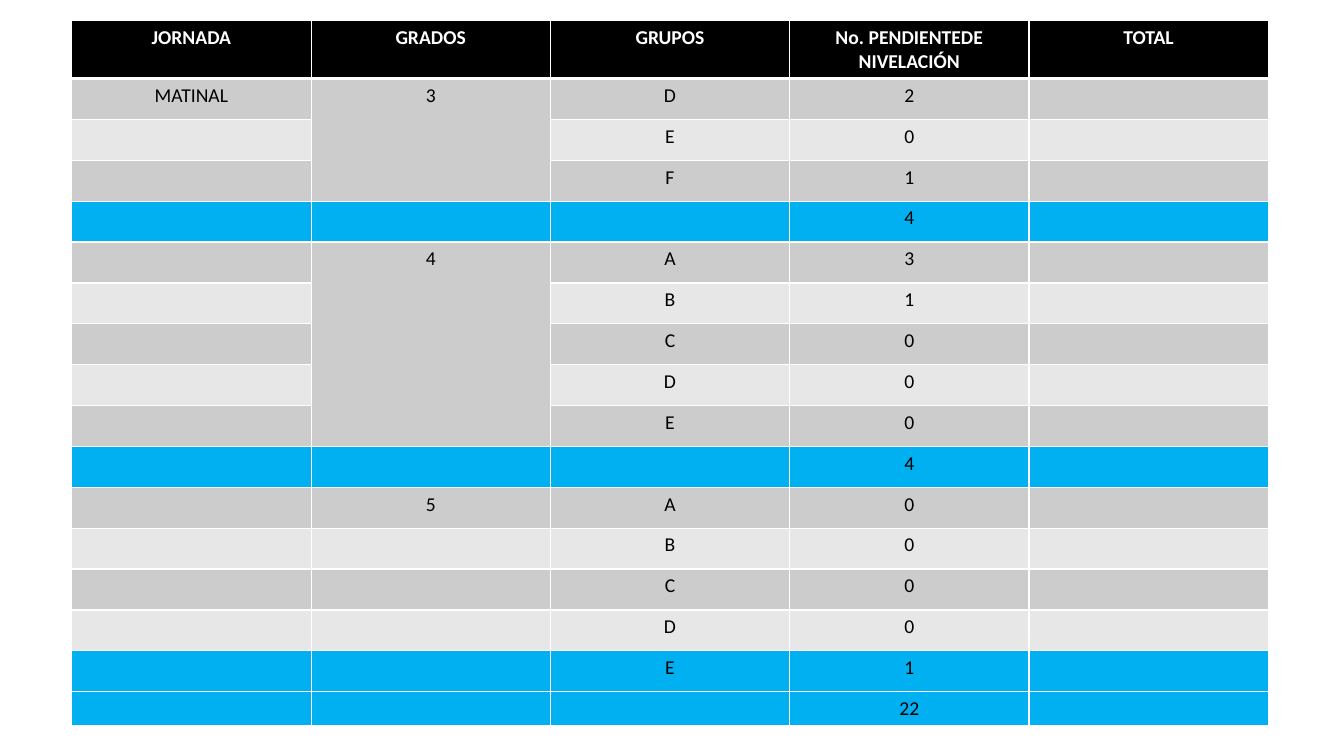
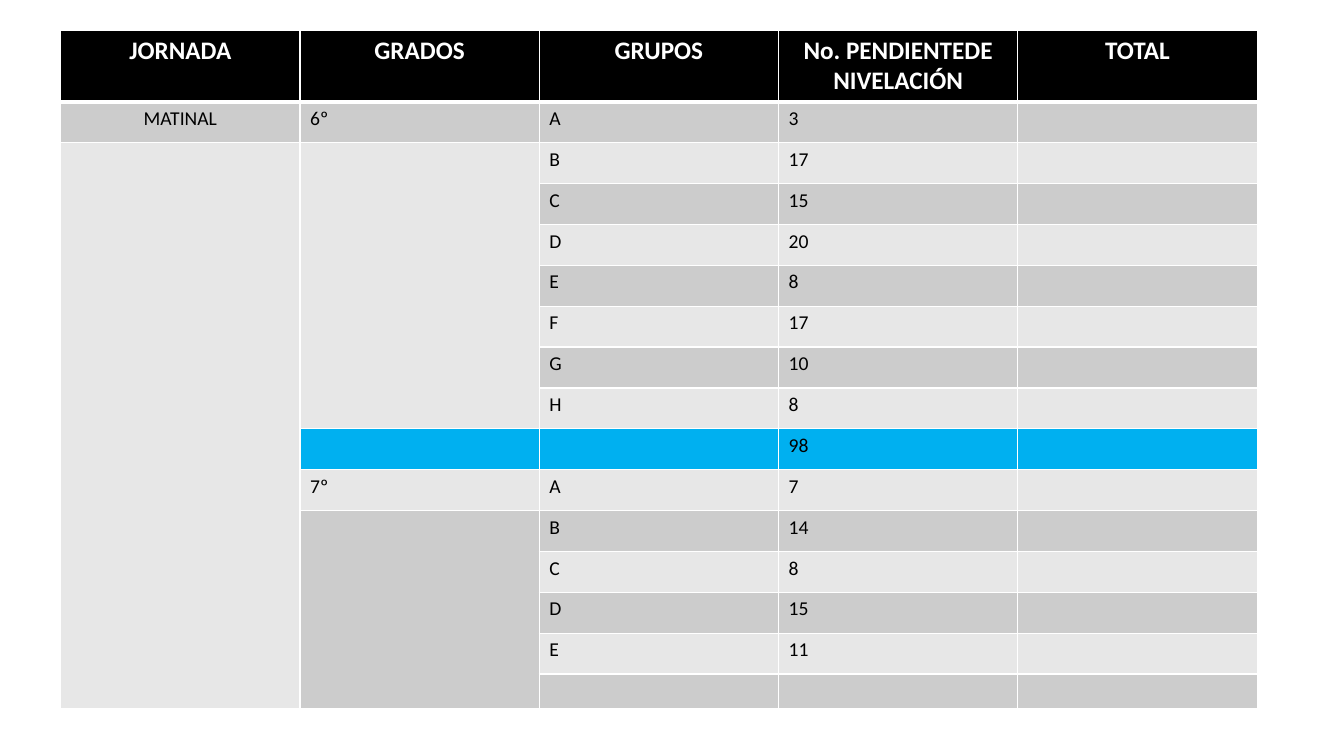
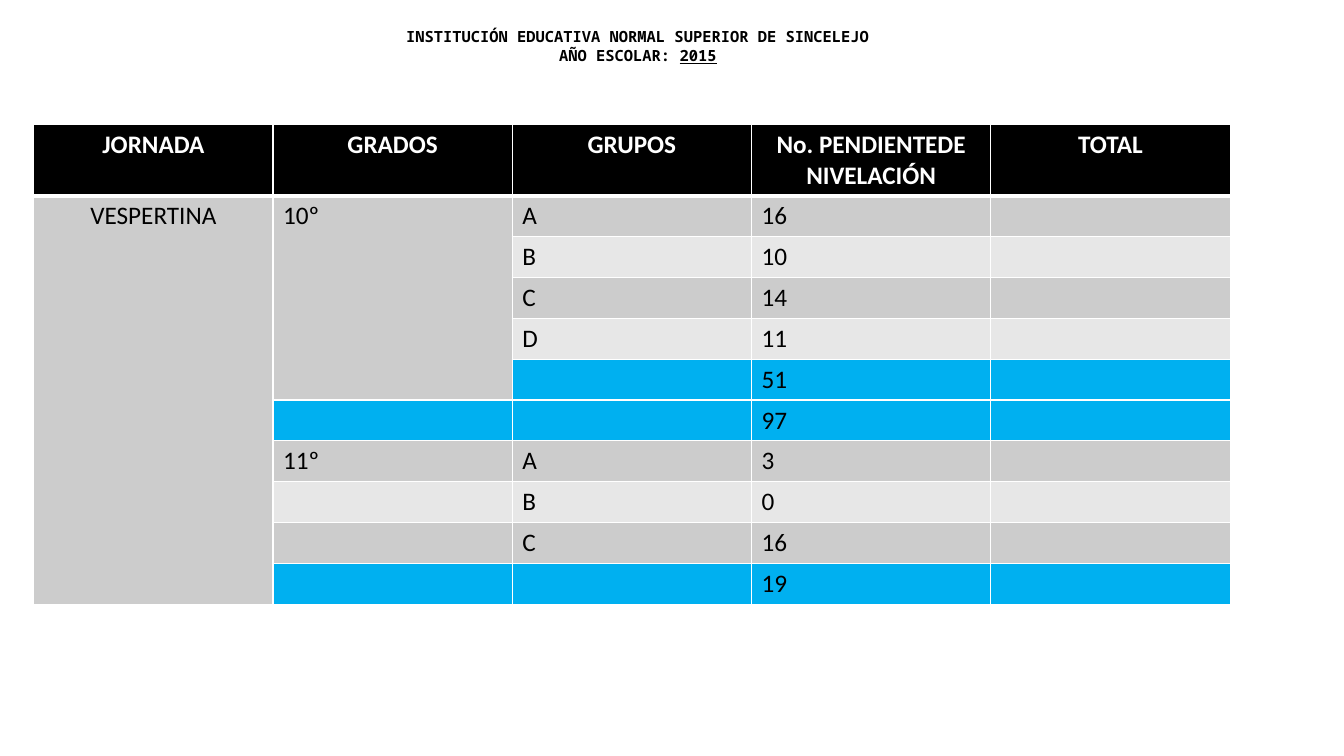
"""Builds three slides with tables of pupils pending levelling, by grade and group."""
from dataclasses import dataclass

from lxml import etree
from pptx import Presentation
from pptx.dml.color import RGBColor
from pptx.enum.text import MSO_ANCHOR, PP_ALIGN
from pptx.oxml.ns import qn
from pptx.util import Cm, Pt

CENTER = PP_ALIGN.CENTER
LEFT = PP_ALIGN.LEFT
MIDDLE = MSO_ANCHOR.MIDDLE
BLANK_LAYOUT = 6


@dataclass(frozen=True)
class Theme:
    """Colours, fonts, type sizes and table measures."""
    white: str = "FFFFFF"
    black: str = "000000"
    band_dark: str = "CCCCCC"
    band_light: str = "E7E7E7"
    total: str = "00B0F0"
    table_font: str = "Calibri"
    heading_font: str = "Noto Sans Mono"
    small: int = 14
    large: int = 18
    heading: int = 11
    thin_line: int = 1
    thick_line: int = 3
    column_width: float = 6.03
    row_height: float = 1.03


HEADERS = ("JORNADA", "GRADOS", "GRUPOS", "No. PENDIENTEDE NIVELACIÓN", "TOTAL")

PRIMARY_ROWS = [
    ("MATINAL", "3", "D", "2"),
    ("", "", "E", "0"),
    ("", "", "F", "1"),
    ("", "", "", "4"),
    ("", "4", "A", "3"),
    ("", "", "B", "1"),
    ("", "", "C", "0"),
    ("", "", "D", "0"),
    ("", "", "E", "0"),
    ("", "", "", "4"),
    ("", "5", "A", "0"),
    ("", "", "B", "0"),
    ("", "", "C", "0"),
    ("", "", "D", "0"),
    ("", "", "E", "1"),
    ("", "", "", "22"),
]

SECONDARY_ROWS = [
    ("MATINAL", "6º", "A", "3"),
    ("", "", "B", "17"),
    ("", "", "C", "15"),
    ("", "", "D", "20"),
    ("", "", "E", "8"),
    ("", "", "F", "17"),
    ("", "", "G", "10"),
    ("", "", "H", "8"),
    ("", "", "", "98"),
    ("", "7º", "A", "7"),
    ("", "", "B", "14"),
    ("", "", "C", "8"),
    ("", "", "D", "15"),
    ("", "", "E", "11"),
    ("", "", "", ""),
]

AFTERNOON_ROWS = [
    ("VESPERTINA", "10º", "A", "16"),
    ("", "", "B", "10"),
    ("", "", "C", "14"),
    ("", "", "D", "11"),
    ("", "", "", "51"),
    ("", "", "", "97"),
    ("", "11º", "A", "3"),
    ("", "", "B", "0"),
    ("", "", "C", "16"),
    ("", "", "", "19"),
]


class Deck:
    """Holds the theme, the presentation and the current slide."""

    def __init__(self, theme):
        """Start an empty widescreen presentation."""
        self.theme = theme
        self.presentation = Presentation()
        self.presentation.slide_width = Cm(33.87)
        self.presentation.slide_height = Cm(19.05)
        self.slide = None

    def add_slide(self):
        """Add a blank slide and make it current."""
        layout = self.presentation.slide_layouts[BLANK_LAYOUT]
        self.slide = self.presentation.slides.add_slide(layout)

    def style(self, paragraph, font_name, size, color, bold, alignment):
        """Set the font and alignment of a paragraph."""
        paragraph.alignment = alignment
        font = paragraph.font
        font.name = font_name
        font.size = Pt(size)
        font.bold = bold
        font.color.rgb = RGBColor.from_string(color)

    def heading(self, left, top, width, height, lines):
        """Add centred heading lines, each a list of (text, underlined) runs."""
        box = self.slide.shapes.add_textbox(Cm(left), Cm(top), Cm(width), Cm(height))
        frame = box.text_frame
        frame.word_wrap = True
        frame.vertical_anchor = MIDDLE
        for index, runs in enumerate(lines):
            paragraph = frame.add_paragraph() if index else frame.paragraphs[0]
            self.style(paragraph, self.theme.heading_font, self.theme.heading,
                       self.theme.black, True, CENTER)
            for text, underlined in runs:
                run = paragraph.add_run()
                run.text = text
                if underlined:
                    run.font.underline = True

    def borders(self, cell, top, bottom):
        """Draw white borders around a cell."""
        properties = cell._tc.get_or_add_tcPr()
        thin = self.theme.thin_line
        for side, width in (("L", thin), ("R", thin), ("T", top), ("B", bottom)):
            line = etree.SubElement(properties, qn(f"a:ln{side}"), w=str(Pt(width)))
            fill = etree.SubElement(line, qn("a:solidFill"))
            etree.SubElement(fill, qn("a:srgbClr"), val=self.theme.white)

    def row_fill(self, row, totals):
        """Return the fill colour of a table row."""
        if row == 0:
            return self.theme.black
        if row in totals:
            return self.theme.total
        return self.theme.band_dark if row % 2 else self.theme.band_light

    def table(self, left, top, rows, totals, merges, header_size, body_size,
              centered_columns, header_height, last_height):
        """Add a banded table; merges are (column, first row, last row)."""
        theme = self.theme
        heights = [header_height] + [theme.row_height] * (len(rows) - 1) + [last_height]
        frame = self.slide.shapes.add_table(
            len(heights), len(HEADERS), Cm(left), Cm(top),
            Cm(theme.column_width * len(HEADERS)), Cm(sum(heights)))
        table = frame.table
        for column in table.columns:
            column.width = Cm(theme.column_width)
        contents = [HEADERS] + [(*row, "") for row in rows]
        for row, (texts, height) in enumerate(zip(contents, heights)):
            table.rows[row].height = Cm(height)
            header = row == 0
            for column, text in enumerate(texts):
                cell = table.cell(row, column)
                self.borders(cell,
                             theme.thick_line if row == 1 else theme.thin_line,
                             theme.thick_line if header else theme.thin_line)
                cell.fill.solid()
                cell.fill.fore_color.rgb = RGBColor.from_string(self.row_fill(row, totals))
                cell.text = text
                self.style(cell.text_frame.paragraphs[0], theme.table_font,
                           header_size if header else body_size,
                           theme.white if header else theme.black, header,
                           CENTER if header or column < centered_columns else LEFT)
        for column, first, last in merges:
            table.cell(first, column).merge(table.cell(last, column))


def main():
    """Build and save the presentation."""
    theme = Theme()
    deck = Deck(theme)

    deck.add_slide()
    deck.table(1.81, 0.52, PRIMARY_ROWS, totals={4, 10, 15, 16},
               merges=[(1, 1, 3), (1, 5, 9)],
               header_size=theme.small, body_size=theme.small,
               centered_columns=5, header_height=1.46, last_height=0.86)

    deck.add_slide()
    deck.table(1.53, 0.76, SECONDARY_ROWS, totals={9},
               merges=[(0, 2, 15), (1, 2, 8), (1, 11, 15)],
               header_size=theme.large, body_size=theme.small,
               centered_columns=1, header_height=1.8, last_height=0.86)

    deck.add_slide()
    deck.heading(5.28, 0.56, 21.59, 1.19, [
        [("INSTITUCIÓN EDUCATIVA NORMAL SUPERIOR DE SINCELEJO", False)],
        [("AÑO ESCOLAR: ", False), ("2015", True)],
    ])
    deck.table(0.85, 3.13, AFTERNOON_ROWS, totals={5, 6, 10},
               merges=[(0, 1, 10), (1, 1, 5)],
               header_size=theme.large, body_size=theme.large,
               centered_columns=1, header_height=1.8, last_height=theme.row_height)

    deck.presentation.save("out.pptx")


if __name__ == "__main__":
    main()
